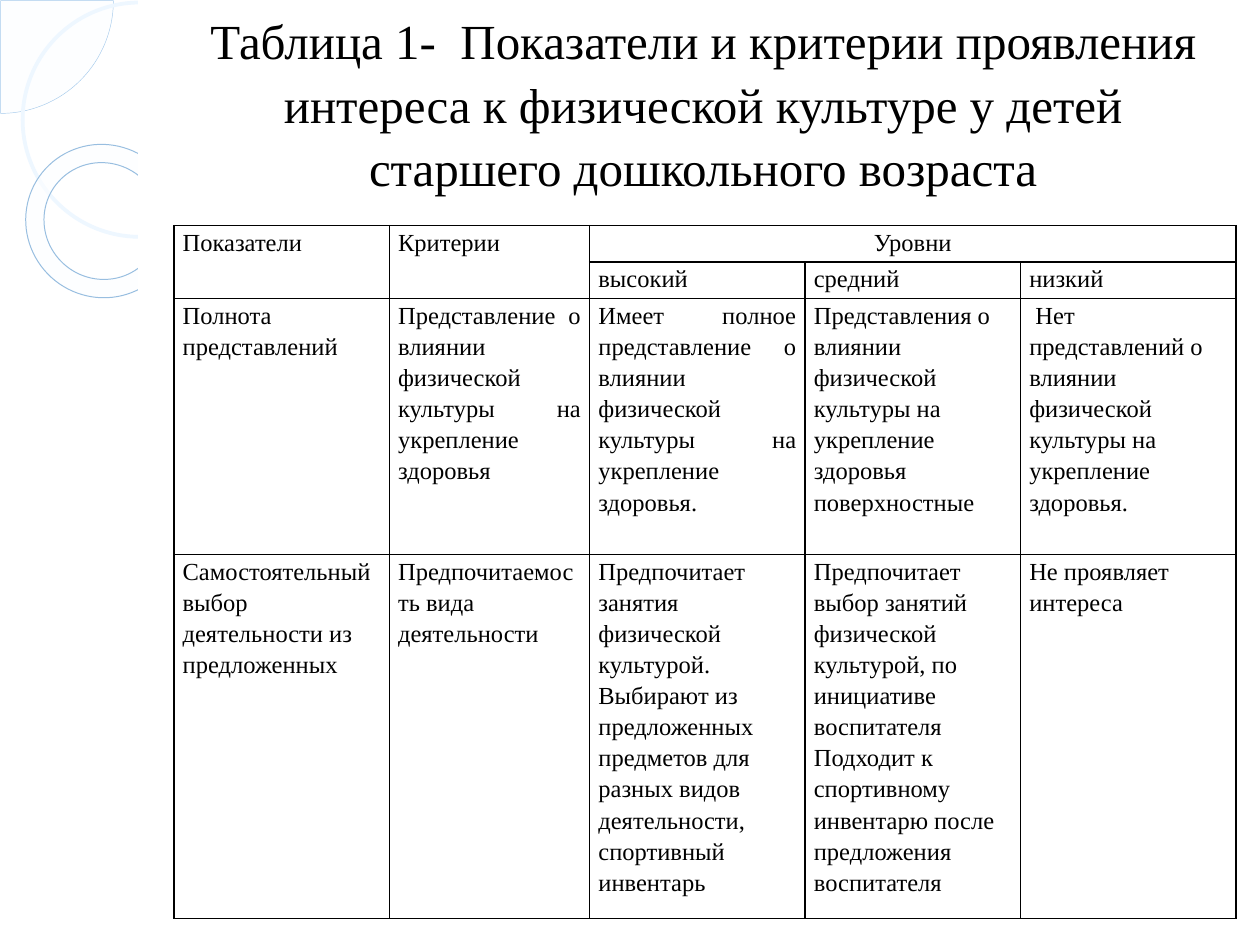
from lxml.etree import SubElement
from pptx import Presentation
from pptx.dml.color import RGBColor
from pptx.enum.shapes import MSO_SHAPE
from pptx.enum.text import MSO_ANCHOR, MSO_AUTO_SIZE, PP_ALIGN
from pptx.oxml import parse_xml
from pptx.oxml.ns import nsdecls, qn
from pptx.util import Inches, Pt

FONT = "Times New Roman"
COLORS = {
    "text": "000000", "panel": "FFFFFF",
    "pie": "FDFEFF", "pie_line": "A6CBEC",
    "ring_line": "EEF7FF",
    "donut": "FDFEFF", "donut_line": "98BEE0",
}
TITLE = ("Таблица 1-  Показатели и критерии проявления интереса "
         "к физической культуре у детей старшего дошкольного возраста")
COLUMN_WIDTHS = [1.71, 1.59, 1.71, 1.71, 1.71]
ROW_HEIGHTS = [0.29, 0.29, 2.03, 2.89]
ROWS = [
    ["Показатели", "Критерии", "Уровни", None, None],
    [None, None, "высокий", "средний", "низкий"],
    ["Полнота представлений",
     "Представление о влиянии физической культуры на укрепление здоровья",
     "Имеет полное представление о влиянии физической культуры на укрепление здоровья.",
     "Представления о влиянии физической культуры на укрепление здоровья поверхностные",
     " Нет представлений о влиянии физической культуры на укрепление здоровья."],
    ["Самостоятельный выбор деятельности из предложенных",
     "Предпочитаемость вида деятельности",
     "Предпочитает занятия физической культурой. Выбирают из предложенных предметов "
     "для разных видов деятельности, спортивный инвентарь",
     "Предпочитает выбор занятий физической культурой, по инициативе воспитателя "
     "Подходит к спортивному инвентарю после предложения воспитателя",
     "Не проявляет интереса"],
]
MERGES = [((0, 0), (1, 0)), ((0, 1), (1, 1)), ((0, 2), (0, 4))]
ALIGNMENTS = {(0, 2): PP_ALIGN.CENTER, (2, 1): PP_ALIGN.JUSTIFY, (2, 2): PP_ALIGN.JUSTIFY}
# kind, box, fill, line, line width, further settings
DECORATIONS = [
    (MSO_SHAPE.PIE, (-0.89, -0.89, 1.79, 1.79), "pie", "pie_line", 0.25,
     {"adjustments": (0, 54)}),
    (MSO_SHAPE.OVAL, (0.18, 0.02, 1.86, 1.86), None, "ring_line", 2.15, {}),
    (MSO_SHAPE.DONUT, (0.2, 1.15, 1.23, 1.21), "donut", "donut_line", 0.58,
     {"adjustments": (0.12,), "rotation": 38.6, "opacity": 60}),
    (MSO_SHAPE.RECTANGLE, (1.11, 0, 8.89, 7.5), "panel", "panel", 2, {}),
    (MSO_SHAPE.RECTANGLE, (1.11, 0, 0.08, 7.5), "panel", "panel", 2, {}),
]


def color(name):
    return RGBColor.from_string(COLORS[name])


def write(frame, text, *, size, align=PP_ALIGN.LEFT, spacing=1.0, before=0):
    frame.word_wrap = True
    paragraph = frame.paragraphs[0]
    paragraph.alignment = align
    paragraph.line_spacing = spacing
    paragraph.space_before = Pt(before)
    run = paragraph.add_run()
    run.text = text
    run.font.name = FONT
    run.font.size = Pt(size)
    run.font.color.rgb = color("text")


def add_decoration(slide, kind, box, fill, line, width, *,
                   adjustments=(), rotation=0, opacity=None):
    shape = slide.shapes.add_shape(kind, *map(Inches, box))
    shape.shadow.inherit = False
    shape.rotation = rotation
    for index, value in enumerate(adjustments):
        shape.adjustments[index] = value
    if fill:
        shape.fill.solid()
        shape.fill.fore_color.rgb = color(fill)
    else:
        shape.fill.background()
    if opacity:
        fill_color = shape._element.spPr.find(qn("a:solidFill"))[0]
        SubElement(fill_color, qn("a:alpha"), val=str(opacity * 1000))
    shape.line.color.rgb = color(line)
    shape.line.width = Pt(width)


def add_title(slide):
    title = slide.shapes.title
    title.left, title.top, title.width, title.height = map(Inches, (1.39, 0, 8.38, 1.6))
    frame = title.text_frame
    frame.vertical_anchor = MSO_ANCHOR.TOP
    frame.auto_size = MSO_AUTO_SIZE.NONE
    write(frame, TITLE, size=28, align=PP_ALIGN.CENTER, spacing=1.08, before=6)
    # Bring the title in front of the white panel
    slide.shapes._spTree.append(title._element)


def format_cell(cell):
    cell.margin_left = cell.margin_right = Inches(0.07)
    cell.margin_top = cell.margin_bottom = 0
    properties = cell._tc.get_or_add_tcPr()
    for side in ("lnL", "lnR", "lnT", "lnB"):
        properties.append(parse_xml(
            f'<a:{side} {nsdecls("a")} w="{Pt(1)}"><a:solidFill>'
            f'<a:srgbClr val="{COLORS["text"]}"/></a:solidFill></a:{side}>'))
    cell.fill.background()


def add_criteria_table(slide):
    table = slide.shapes.add_table(
        len(ROWS), len(COLUMN_WIDTHS), Inches(1.38), Inches(1.79),
        Inches(sum(COLUMN_WIDTHS)), Inches(sum(ROW_HEIGHTS))).table
    table.first_row = table.horz_banding = False
    for column, width in zip(table.columns, COLUMN_WIDTHS):
        column.width = Inches(width)
    for row, height in zip(table.rows, ROW_HEIGHTS):
        row.height = Inches(height)
    for start, end in MERGES:
        table.cell(*start).merge(table.cell(*end))
    for r, texts in enumerate(ROWS):
        for c, text in enumerate(texts):
            cell = table.cell(r, c)
            format_cell(cell)
            if text:
                write(cell.text_frame, text, size=14, spacing=1.15,
                      align=ALIGNMENTS.get((r, c), PP_ALIGN.LEFT))


def main():
    presentation = Presentation()
    presentation.slide_width, presentation.slide_height = Inches(10), Inches(7.5)
    slide = presentation.slides.add_slide(presentation.slide_layouts[5])
    for *decoration, settings in DECORATIONS:
        add_decoration(slide, *decoration, **settings)
    add_title(slide)
    add_criteria_table(slide)
    presentation.save("out.pptx")


if __name__ == "__main__":
    main()
